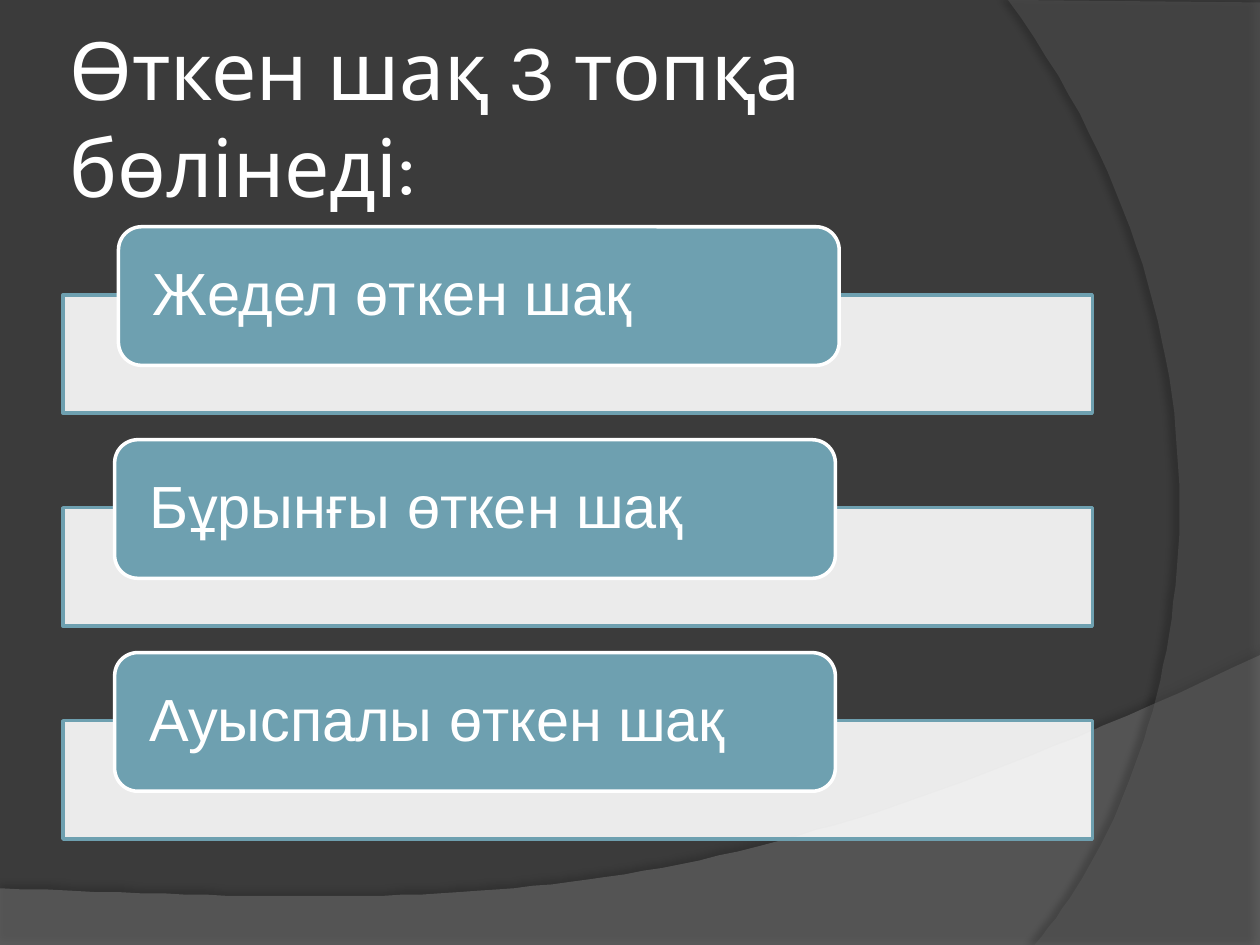
"""Builds the slide that lists the three groups of the past tense in Kazakh."""
from dataclasses import dataclass

import lxml.etree
import pptx
import pptx.dml.color
import pptx.enum.shapes
import pptx.enum.text
import pptx.oxml.ns
import pptx.util

PX = pptx.util.Inches(1) // 100


@dataclass(frozen=True)
class Theme:
    background: str = "3B3B3B"
    white: str = "FFFFFF"
    accent: str = "6EA0B0"
    wave: str = "7F7F7F"
    arc: str = "5E5E5E"
    shadow: str = "000000"
    title_font: str = "Karla"
    label_font: str = "Arial"
    title_size: int = 46
    label_size: int = 34
    outline: int = 2


def rgb(code):
    return pptx.dml.color.RGBColor.from_string(code)


def add_xml(parent, tag, **attributes):
    return lxml.etree.SubElement(
        parent, pptx.oxml.ns.qn(tag), {key: str(value) for key, value in attributes.items()}
    )


def bezier(start, control1, control2, end, steps=60):
    weights = [
        ((1 - t) ** 3, 3 * t * (1 - t) ** 2, 3 * t * t * (1 - t), t ** 3)
        for t in (step / steps for step in range(steps + 1))
    ]
    return [
        tuple(sum(w * p[axis] for w, p in zip(row, (start, control1, control2, end))) for axis in (0, 1))
        for row in weights
    ]


class Painter:
    def __init__(self, slide, theme):
        self.slide = slide
        self.theme = theme
        slide.background.fill.solid()
        slide.background.fill.fore_color.rgb = rgb(theme.background)

    def paint(self, shape, color, opacity=100, line=None):
        shape.shadow.inherit = False
        shape.fill.solid()
        shape.fill.fore_color.rgb = rgb(color)
        if opacity < 100:
            solid = shape.element.spPr.find(pptx.oxml.ns.qn("a:solidFill"))
            add_xml(solid[0], "a:alpha", val=opacity * 1000)
        if line:
            shape.line.color.rgb = rgb(line)
            shape.line.width = pptx.util.Pt(self.theme.outline)
        else:
            shape.line.fill.background()

    def set_text(self, frame, words, font, size, side, edge):
        frame.word_wrap = True
        frame.auto_size = pptx.enum.text.MSO_AUTO_SIZE.NONE
        frame.vertical_anchor = pptx.enum.text.MSO_ANCHOR.MIDDLE
        frame.margin_left = frame.margin_right = side * PX
        frame.margin_top = frame.margin_bottom = edge * PX
        paragraph = frame.paragraphs[0]
        paragraph.alignment = pptx.enum.text.PP_ALIGN.LEFT
        run = paragraph.add_run()
        run.text = words
        run.font.name = font
        run.font.size = pptx.util.Pt(size)
        run.font.color.rgb = rgb(self.theme.white)
        return paragraph

    def title(self, words, left, top, width, height):
        heading = self.slide.shapes.title
        heading.left, heading.top = left * PX, top * PX
        heading.width, heading.height = width * PX, height * PX
        self.set_text(heading.text_frame, words, self.theme.title_font, self.theme.title_size, 5, 5)

    def swoosh(self, points, color, opacity, shade, distance, direction):
        builder = self.slide.shapes.build_freeform(*points[0], scale=PX)
        builder.add_line_segments(points[1:], close=True)
        outline = builder.convert_to_shape()
        self.paint(outline, color, opacity)
        effects = outline.element.spPr.find(pptx.oxml.ns.qn("a:effectLst"))
        cast = add_xml(
            effects, "a:outerShdw", blurRad=pptx.util.Pt(4), dist=pptx.util.Pt(distance),
            dir=direction * 60000, algn="ctr", rotWithShape=0,
        )
        tone = add_xml(cast, "a:srgbClr", val=self.theme.shadow)
        add_xml(tone, "a:alpha", val=shade * 1000)

    def box(self, kind, left, top, width, height, color, line, opacity=100):
        shape = self.slide.shapes.add_shape(kind, left * PX, top * PX, width * PX, height * PX)
        self.paint(shape, color, opacity, line)
        return shape

    def bar(self, left, top, width, height):
        self.box(pptx.enum.shapes.MSO_SHAPE.RECTANGLE, left, top, width, height,
                 self.theme.white, self.theme.accent, 90)

    def label(self, words, left, top, width, height):
        plate = self.box(pptx.enum.shapes.MSO_SHAPE.ROUNDED_RECTANGLE, left, top, width, height,
                         self.theme.accent, self.theme.white)
        paragraph = self.set_text(plate.text_frame, words, self.theme.label_font,
                                  self.theme.label_size, 22, 0)
        paragraph.line_spacing = 0.9


def main():
    deck = pptx.Presentation()
    deck.slide_width, deck.slide_height = 1000 * PX, 750 * PX
    theme = Theme()
    painter = Painter(deck.slides.add_slide(deck.slide_layouts[5]), theme)

    wave = [(0, 750), (1000, 750)] + bezier((1000, 520), (559, 729), (391, 719), (0, 705))
    arc = [(1000, 2), (1000, 750)] + bezier((821, 750), (935, 619), (1018, 300), (800, 0))
    painter.swoosh(wave, theme.wave, 45, shade=35, distance=3.5, direction=270)
    painter.swoosh(arc, theme.arc, 40, shade=45, distance=4, direction=180)

    painter.title("Өткен шақ 3 топқа бөлінеді:", 50, 30, 817, 125)
    tenses = [("Жедел өткен шақ", 94), ("Бұрынғы өткен шақ", 91), ("Ауыспалы өткен шақ", 91)]
    for row, (tense, left) in enumerate(tenses):
        top = 180 + 169 * row
        painter.bar(50, top + 54, 817, 94)
        painter.label(tense, left, top, 572, 110)

    deck.save("out.pptx")


if __name__ == "__main__":
    main()
